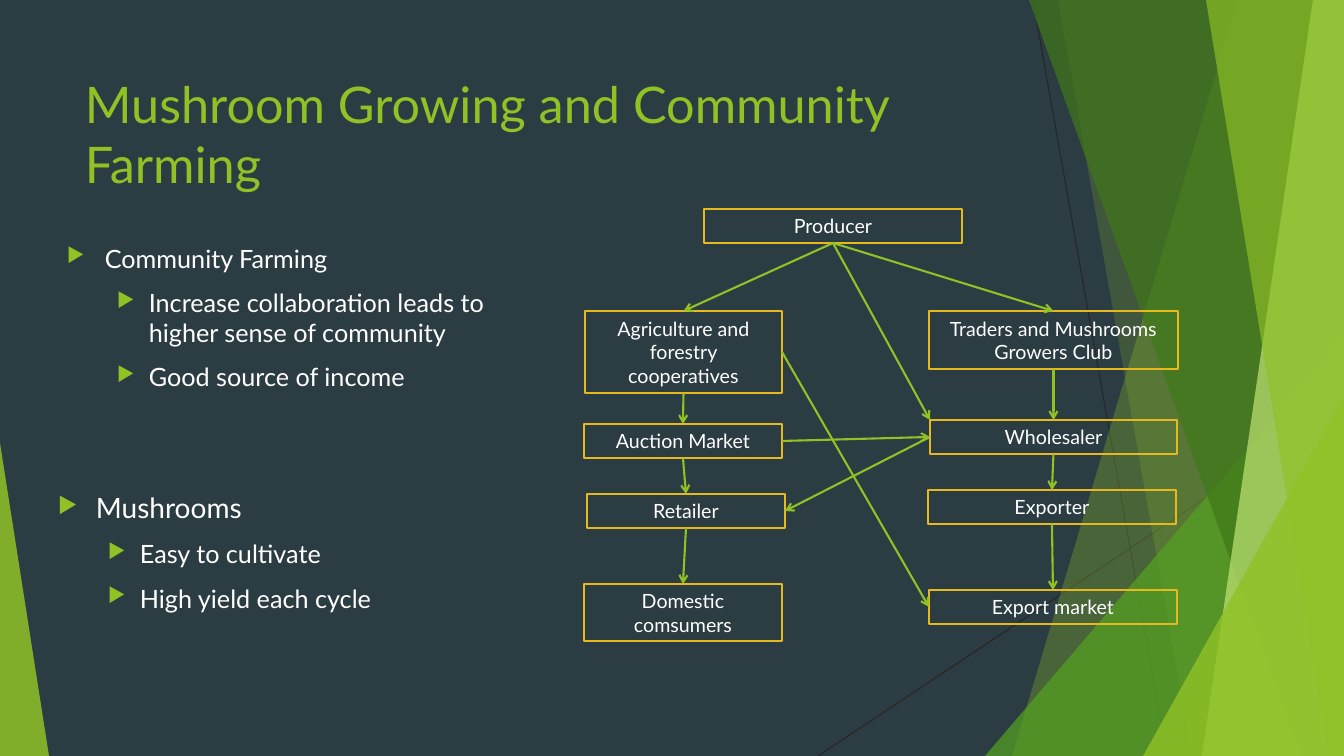
from pptx import Presentation
from pptx.dml.color import RGBColor
from pptx.enum.shapes import MSO_CONNECTOR, MSO_SHAPE
from pptx.enum.text import MSO_ANCHOR, MSO_AUTO_SIZE, PP_ALIGN
from pptx.oxml.ns import qn
from pptx.util import Pt
from lxml import etree

RECT = MSO_SHAPE.RECTANGLE
WEDGE = MSO_SHAPE.ISOSCELES_TRIANGLE
LINE = MSO_CONNECTOR.STRAIGHT
CENTER = PP_ALIGN.CENTER
LEFT = PP_ALIGN.LEFT
MIDDLE = MSO_ANCHOR.MIDDLE
TOP = MSO_ANCHOR.TOP
GROW = MSO_AUTO_SIZE.SHAPE_TO_FIT_TEXT

WIDE, HIGH = 1344, 756
SCALE = 914400 / 100.8
FONT = "Lato"
COLORS = {
    "back": "2C3C43", "lime": "90C226", "green": "54A021", "dark": "3F7819",
    "pale": "C0E474", "gold": "E6B91E", "white": "FFFFFF", "ink": "262626",
}
SITES = {"top": 0, "left": 1, "bottom": 2, "right": 3}
INDENTS = [(38, -38), (82, -32)]


def px(size):
    return round(size * SCALE)


def color(name):
    return RGBColor.from_string(COLORS[name])


class Deck:
    def __init__(self):
        self.show = Presentation()
        self.show.slide_width = px(WIDE)
        self.show.slide_height = px(HIGH)
        self.slide = self.show.slides.add_slide(self.show.slide_layouts[6])
        self.shapes = self.slide.shapes
        fill = self.slide.background.fill
        fill.solid()
        fill.fore_color.rgb = color("back")

    def tint(self, shape, name, alpha):
        shape.shadow.inherit = False
        shape.fill.solid()
        shape.fill.fore_color.rgb = color(name)
        shape.line.fill.background()
        tone = shape.element.find(".//" + qn("a:srgbClr"))
        etree.SubElement(tone, qn("a:alpha"), val=str(alpha * 1000))

    def shard(self, top, base, name, alpha):
        form = self.shapes.build_freeform(top, 0, scale=SCALE)
        form.add_line_segments([(WIDE, 0), (WIDE, HIGH), (base, HIGH)], close=True)
        self.tint(form.convert_to_shape(), name, alpha)

    def wedge(self, x, y, w, peak, name, alpha):
        shape = self.shapes.add_shape(WEDGE, px(x), px(y), px(w), px(HIGH - y))
        shape.adjustments[0] = peak
        self.tint(shape, name, alpha)

    def line(self, start, end, name, width):
        link = self.shapes.add_connector(LINE, *map(px, start + end))
        link.line.color.rgb = color(name)
        link.line.width = Pt(width)
        etree.SubElement(link.element.spPr, qn("a:effectLst"))
        return link

    def arrow(self, first, exit, last, entry):
        corner = (last.left / SCALE, last.top / SCALE)
        link = self.line(corner, corner, "lime", 1.5)
        link.begin_connect(first, SITES[exit])
        if entry in SITES:
            link.end_connect(last, SITES[entry])
        stroke = link.element.spPr.find(qn("a:ln"))
        etree.SubElement(stroke, qn("a:tailEnd"), type="arrow")

    def run(self, para, text, size, name):
        run = para.add_run()
        run.text = text
        run.font.name = FONT
        run.font.size = Pt(size)
        run.font.color.rgb = color(name)

    def box(self, text, x, y, w, h):
        shape = self.shapes.add_shape(RECT, px(x), px(y), px(w), px(h))
        shape.shadow.inherit = False
        shape.fill.background()
        shape.line.color.rgb = color("gold")
        shape.line.width = Pt(1.5)
        frame = shape.text_frame
        frame.word_wrap = True
        frame.auto_size = GROW
        frame.vertical_anchor = MIDDLE
        para = frame.paragraphs[0]
        para.alignment = CENTER
        self.run(para, text, 14, "white")
        return shape

    def frame(self, x, y, w, h):
        frame = self.shapes.add_textbox(px(x), px(y), px(w), px(h)).text_frame
        frame.word_wrap = True
        frame.vertical_anchor = TOP
        return frame

    def title(self, text, *area):
        self.run(self.frame(*area).paragraphs[0], text, 36, "lime")

    def bullets(self, items, *area):
        frame = self.frame(*area)
        for i, (level, size, text) in enumerate(items):
            para = frame.add_paragraph() if i else frame.paragraphs[0]
            para.level = level
            para.alignment = LEFT
            para.space_before = Pt(10)
            props = para._p.get_or_add_pPr()
            margin, indent = INDENTS[level]
            props.set("marL", str(px(margin)))
            props.set("indent", str(px(indent)))
            tone = etree.SubElement(props, qn("a:buClr"))
            etree.SubElement(tone, qn("a:srgbClr"), val=COLORS["lime"])
            etree.SubElement(props, qn("a:buSzPct"), val="80000")
            etree.SubElement(props, qn("a:buChar"), char="▶")
            self.run(para, text, size, "white")


def main():
    deck = Deck()
    deck.line((1033, 0), (1167, HIGH), "ink", 0.75)
    deck.line((WIDE, 406), (818, HIGH), "ink", 0.75)
    deck.shard(1238, 1012, "lime", 30)
    deck.shard(1058, 1192, "lime", 20)
    deck.wedge(985, 336, 359, 1, "green", 72)
    deck.shard(1029, 1301, "dark", 70)
    deck.shard(1313, 1202, "pale", 70)
    deck.shard(1206, 1329, "lime", 65)
    deck.wedge(1143, 396, 201, 1, "lime", 80)
    deck.wedge(0, 443, 49, 0, "lime", 85)

    deck.title("Mushroom Growing and Community Farming", 75, 68, 948, 145)
    deck.bullets([
        (0, 18, "Community Farming"),
        (1, 18, "Increase collaboration leads to higher sense of community"),
        (1, 18, "Good source of income"),
    ], 57, 238, 462, 427)
    deck.bullets([
        (0, 20, "Mushrooms"),
        (1, 18, "Easy to cultivate"),
        (1, 18, "High yield each cycle"),
    ], 48, 486, 462, 164)

    maker = deck.box("Producer", 704, 209, 258, 34)
    coop = deck.box("Agriculture and forestry cooperatives", 585, 311, 197, 82)
    auction = deck.box("Auction Market", 584, 424, 198, 34)
    shop = deck.box("Retailer", 587, 494, 198, 34)
    home = deck.box("Domestic comsumers", 584, 584, 198, 57)
    club = deck.box("Traders and Mushrooms Growers Club", 929, 311, 249, 58)
    whole = deck.box("Wholesaler", 930, 420, 247, 34)
    export = deck.box("Exporter", 928, 490, 248, 34)
    market = deck.box("Export market", 929, 590, 248, 34)

    deck.arrow(maker, "bottom", club, "top")
    deck.arrow(maker, "bottom", whole, "corner")
    deck.arrow(maker, "bottom", coop, "top")
    deck.arrow(coop, "right", market, "left")
    deck.arrow(auction, "right", whole, "left")
    deck.arrow(whole, "left", shop, "right")
    for chain in ((coop, auction, shop, home), (club, whole, export, market)):
        for first, last in zip(chain, chain[1:]):
            deck.arrow(first, "bottom", last, "top")

    deck.show.save("out.pptx")


if __name__ == "__main__":
    main()
